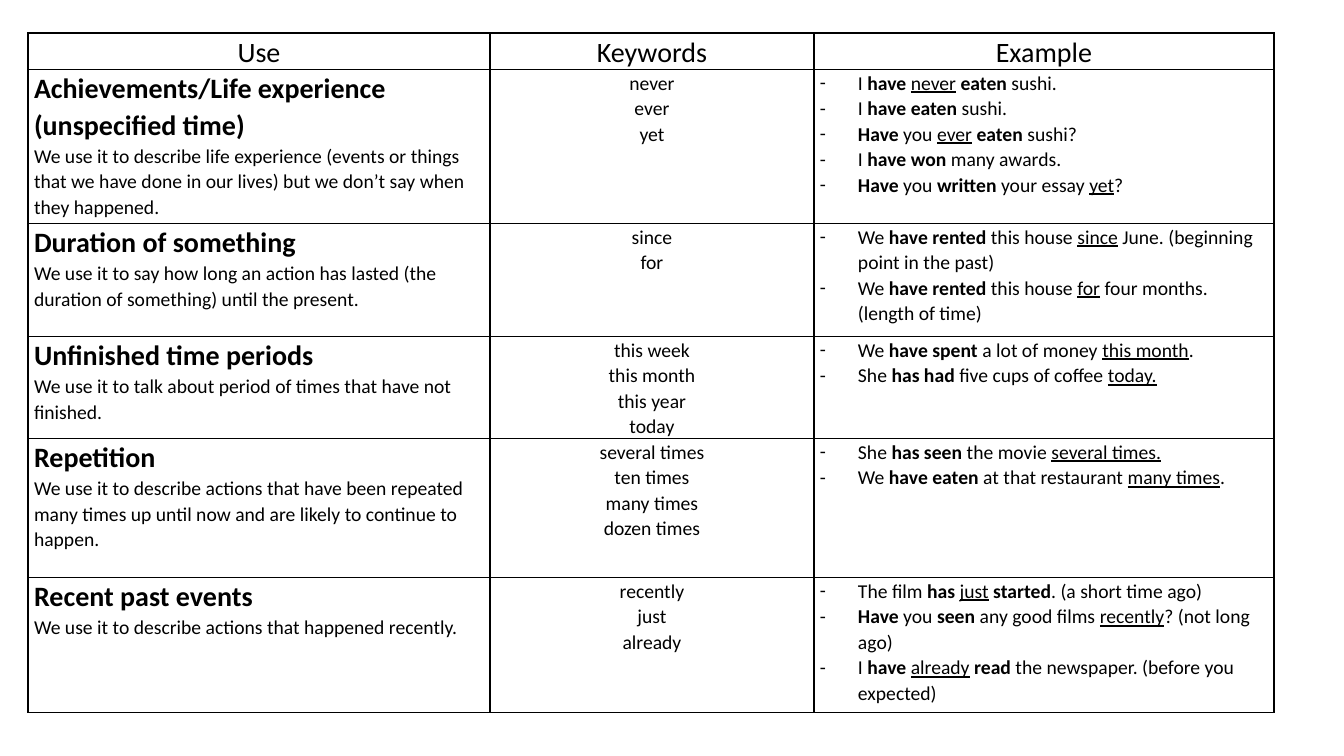
from lxml.etree import SubElement as add_sub
from pptx import Presentation
from pptx.dml.color import RGBColor
from pptx.enum.text import PP_ALIGN as Align
from pptx.oxml.ns import qn
from pptx.util import Pt

PX = 914400 / 100.8
FONT, INK = "Calibri", "000000"
COLS = [462, 324, 460]
ROWS = [36, 154, 113, 102, 139, 135]
HEADS = ["Use", "Keywords", "Example"]

# In the examples, * marks bold and _ marks underline.
USES = [
    ("Achievements/Life experience (unspecified time)",
     "We use it to describe life experience (events or things that we have "
     "done in our lives) but we don’t say when they happened.",
     ["never", "ever", "yet"],
     ["I *have *_never_ *eaten* sushi.",
      "I *have eaten* sushi.",
      "*Have* you _ever_ *eaten* sushi?",
      "I *have won* many awards.",
      "*Have* you *written* your essay _yet_?"]),
    ("Duration of something",
     "We use it to say how long an action has lasted (the duration of "
     "something) until the present.",
     ["since", "for"],
     ["We *have rented* this house _since_ June. (beginning point in the past)",
      "We *have rented* this house _for_ four months. (length of time)"]),
    ("Unfinished time periods",
     "We use it to talk about period of times that have not finished.",
     ["this week", "this month", "this year", "today"],
     ["We *have spent* a lot of money _this month_.",
      "She *has had* five cups of coffee _today._"]),
    ("Repetition",
     "We use it to describe actions that have been repeated many times up "
     "until now and are likely to continue to happen.",
     ["several times", "ten times", "many times", "dozen times"],
     ["She *has seen* the movie _several times._",
      "We *have eaten* at that restaurant _many times_."]),
    ("Recent past events",
     "We use it to describe actions that happened recently.",
     ["recently", "just", "already"],
     ["The film *has *_just_ *started*. (a short time ago)",
      "*Have* you *seen* any good films _recently_? (not long ago)",
      "I *have *_already_ *read* the newspaper. (before you expected)"]),
]


def px(num):
    return round(num * PX)


def color(code):
    return RGBColor.from_string(code)


def style(run, size, bold=False, under=False):
    font = run.font
    font.name, font.size = FONT, Pt(size)
    font.bold, font.underline = bold, under
    font.color.rgb = color(INK)


def border(cell):
    props = cell._tc.get_or_add_tcPr()
    for side in ("lnL", "lnR", "lnT", "lnB"):
        line = add_sub(props, qn(f"a:{side}"), w=str(Pt(1)))
        fill = add_sub(line, qn("a:solidFill"))
        add_sub(fill, qn("a:srgbClr"), val=INK)


def frame(cell):
    """Give the cell its lines and margins."""
    border(cell)
    cell.fill.background()
    cell.margin_left = cell.margin_right = px(6)
    cell.margin_top = cell.margin_bottom = 0


def write(cell, lines, align=Align.LEFT, size=14):
    cell.text_frame.text = "\n".join(lines)
    for para in cell.text_frame.paragraphs:
        para.alignment, para.line_spacing = align, 1.07
        for run in para.runs:
            style(run, size)


def mark(para, text):
    """Replace the marked text by bold and underlined runs."""
    para.text = ""
    for i, part in enumerate(text.split("*")):
        for j, piece in enumerate(part.split("_")):
            if piece:
                run = para.add_run()
                run.text = piece
                style(run, 14, i % 2 == 1, j % 2 == 1)


def dash(para):
    props = para._p.get_or_add_pPr()
    props.set("marL", str(px(38)))
    props.set("indent", str(px(-38)))
    add_sub(props, qn("a:buFont"), typeface=FONT)
    add_sub(props, qn("a:buChar"), char="-")


def fill_row(cells, title, note, words, samples):
    use, keys, shown = cells
    write(use, [title, note])
    style(use.text_frame.paragraphs[0].runs[0], 20, True)
    write(keys, words, Align.CENTER)
    write(shown, samples)
    for para, text in zip(shown.text_frame.paragraphs, samples):
        mark(para, text)
        dash(para)


def add_grid(slide):
    table = slide.shapes.add_table(
        len(ROWS), len(COLS), px(28), px(33), px(sum(COLS)), px(sum(ROWS))).table
    table.first_row = table.horz_banding = False
    for col, wide in zip(table.columns, COLS):
        col.width = px(wide)
    for row, high in zip(table.rows, ROWS):
        row.height = px(high)
    for cell in table.iter_cells():
        frame(cell)
    return table


def main():
    deck = Presentation()
    deck.slide_width, deck.slide_height = px(1344), px(756)
    slide = deck.slides.add_slide(deck.slide_layouts[6])
    rows = list(add_grid(slide).rows)
    for cell, head in zip(rows[0].cells, HEADS):
        write(cell, [head], Align.CENTER, 20)
    for row, use in zip(rows[1:], USES):
        fill_row(row.cells, *use)
    deck.save("out.pptx")


if __name__ == "__main__":
    main()
